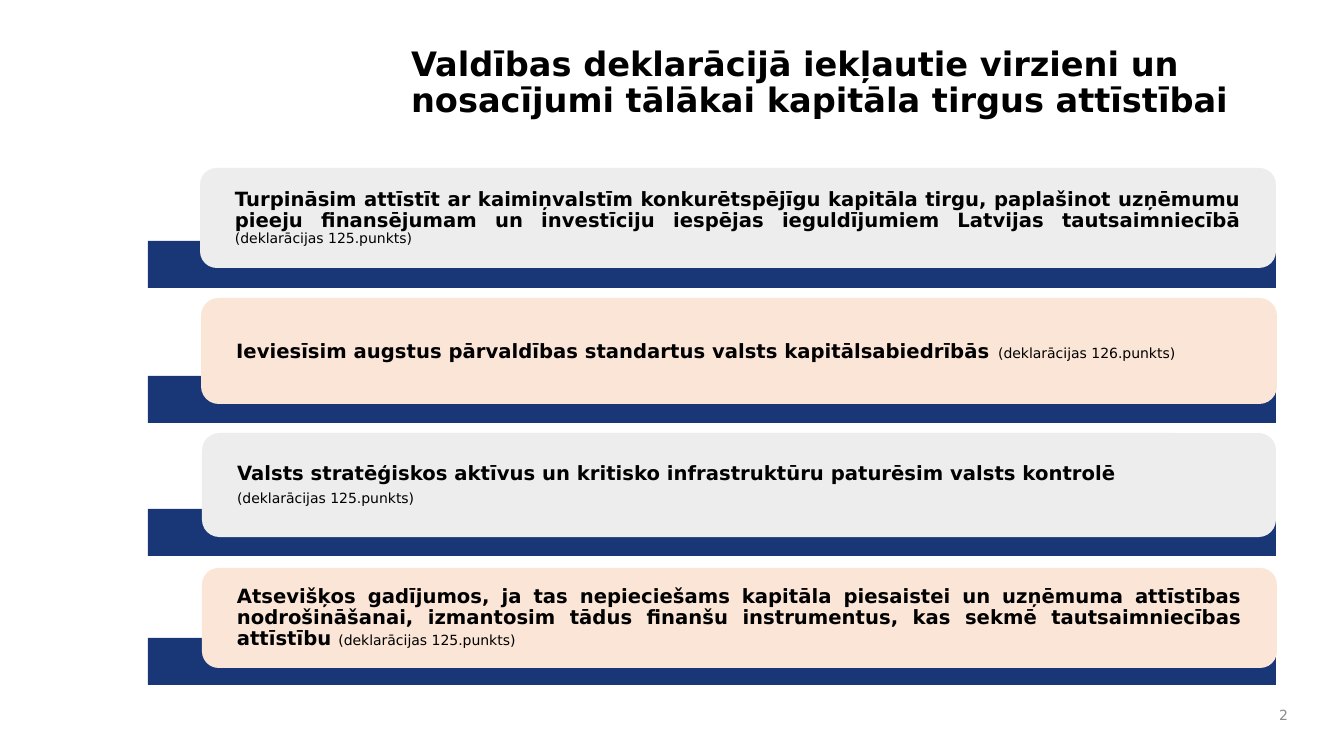
from dataclasses import dataclass

from lxml.etree import SubElement
from pptx import Presentation
from pptx.dml.color import RGBColor
from pptx.enum.shapes import MSO_SHAPE
from pptx.enum.text import MSO_ANCHOR, PP_ALIGN
from pptx.oxml.ns import qn
from pptx.util import Emu, Pt

TITLE = "Valdības deklarācijā iekļautie virzieni un nosacījumi tālākai kapitāla tirgus attīstībai"
PAGE_NUMBER = "2"


@dataclass(frozen=True)
class Theme:
    font: str = "DejaVu Sans"
    black: str = "000000"
    muted: str = "8C8C8C"
    navy: str = "012269"
    grey: str = "EDEDED"
    peach: str = "FBE5D6"
    title: int = 24
    gap: int = 16
    body: int = 14
    note: int = 10


THEME = Theme()

# Each card: left, top, width, height, top of its bar (px), then paragraphs of (text, size) spans
CARDS = [
    (200, 168, 1076, 100, 241, [
        [("Turpināsim attīstīt ar kaimiņvalstīm konkurētspējīgu kapitāla tirgu, paplašinot uzņēmumu "
          "pieeju finansējumam un investīciju iespējas ieguldījumiem Latvijas tautsaimniecībā ", THEME.body),
         ("(deklarācijas 125.punkts)", THEME.note)],
    ]),
    (201, 298, 1076, 106, 376, [
        [("Ieviesīsim augstus pārvaldības standartus valsts kapitālsabiedrībās", THEME.body),
         (" ", THEME.gap),
         ("(deklarācijas 126.punkts)", THEME.note)],
    ]),
    (202, 433, 1074, 104, 509, [
        [("Valsts stratēģiskos aktīvus un kritisko infrastruktūru paturēsim valsts kontrolē ", THEME.body)],
        [("(deklarācijas 125.punkts)", THEME.note)],
    ]),
    (202, 568, 1075, 100, 638, [
        [("Atsevišķos gadījumos, ja tas nepieciešams kapitāla piesaistei un uzņēmuma attīstības "
          "nodrošināšanai, izmantosim tādus finanšu instrumentus, kas sekmē tautsaimniecības attīstību ",
          THEME.body),
         ("(deklarācijas 125.punkts)", THEME.note)],
    ]),
]
CARD_FILLS = [THEME.grey, THEME.peach]
CARD_INSET = 30
BAR_LEFT, BAR_WIDTH, BAR_HEIGHT = 148, 1128, 47
BAR_OPACITY = 90
SLIDE_WIDTH, SLIDE_HEIGHT = 1344, 756


def px(length):
    return Emu(round(length * 914400 / 100.8))


def write(shape, paragraphs, color=THEME.black, align=PP_ALIGN.LEFT, anchor=MSO_ANCHOR.MIDDLE,
          line_spacing=0.9, space_after=0):
    """Fill a shape with paragraphs of (text, size) spans; sizes above the note size are bold."""
    frame = shape.text_frame
    frame.word_wrap = True
    frame.vertical_anchor = anchor
    for index, spans in enumerate(paragraphs):
        para = frame.paragraphs[0] if index == 0 else frame.add_paragraph()
        para.alignment = align
        para.line_spacing = line_spacing
        para.space_before = Pt(0)
        para.space_after = Pt(space_after)
        for text, size in spans:
            span = para.add_run()
            span.text = text
            span.font.name = THEME.font
            span.font.size = Pt(size)
            span.font.bold = size > THEME.note
            span.font.color.rgb = RGBColor.from_string(color)


def add_block(slide, kind, left, top, width, height, fill):
    block = slide.shapes.add_shape(kind, px(left), px(top), px(width), px(height))
    block.shadow.inherit = False
    block.fill.solid()
    block.fill.fore_color.rgb = RGBColor.from_string(fill)
    block.line.fill.background()
    return block


def set_opacity(block, percent):
    color = block.fill._xPr.find(qn("a:solidFill"))[0]
    SubElement(color, qn("a:alpha")).set("val", str(percent * 1000))


def add_title(slide):
    title = slide.shapes.title
    title.left, title.top, title.width, title.height = px(401), px(42), px(875), px(114)
    write(title, [[(TITLE, THEME.title)]], anchor=MSO_ANCHOR.TOP)


def add_card(slide, index, left, top, width, height, bar_top, paragraphs):
    bar = add_block(slide, MSO_SHAPE.RECTANGLE, BAR_LEFT, bar_top, BAR_WIDTH, BAR_HEIGHT, THEME.navy)
    set_opacity(bar, BAR_OPACITY)
    card = add_block(slide, MSO_SHAPE.ROUNDED_RECTANGLE, left, top, width, height,
                     CARD_FILLS[index % len(CARD_FILLS)])
    frame = card.text_frame
    frame.margin_left = frame.margin_right = px(CARD_INSET)
    frame.margin_top = frame.margin_bottom = 0
    write(card, paragraphs, align=PP_ALIGN.JUSTIFY, space_after=5)


def add_page_number(slide):
    box = slide.shapes.add_textbox(px(1237), px(698), px(61), px(33))
    write(box, [[(PAGE_NUMBER, THEME.note)]], color=THEME.muted, align=PP_ALIGN.RIGHT, line_spacing=1.0)


def main():
    deck = Presentation()
    deck.slide_width, deck.slide_height = px(SLIDE_WIDTH), px(SLIDE_HEIGHT)
    slide = deck.slides.add_slide(deck.slide_layouts[5])
    add_title(slide)
    for index, card in enumerate(CARDS):
        add_card(slide, index, *card)
    add_page_number(slide)
    deck.save("out.pptx")


if __name__ == "__main__":
    main()
